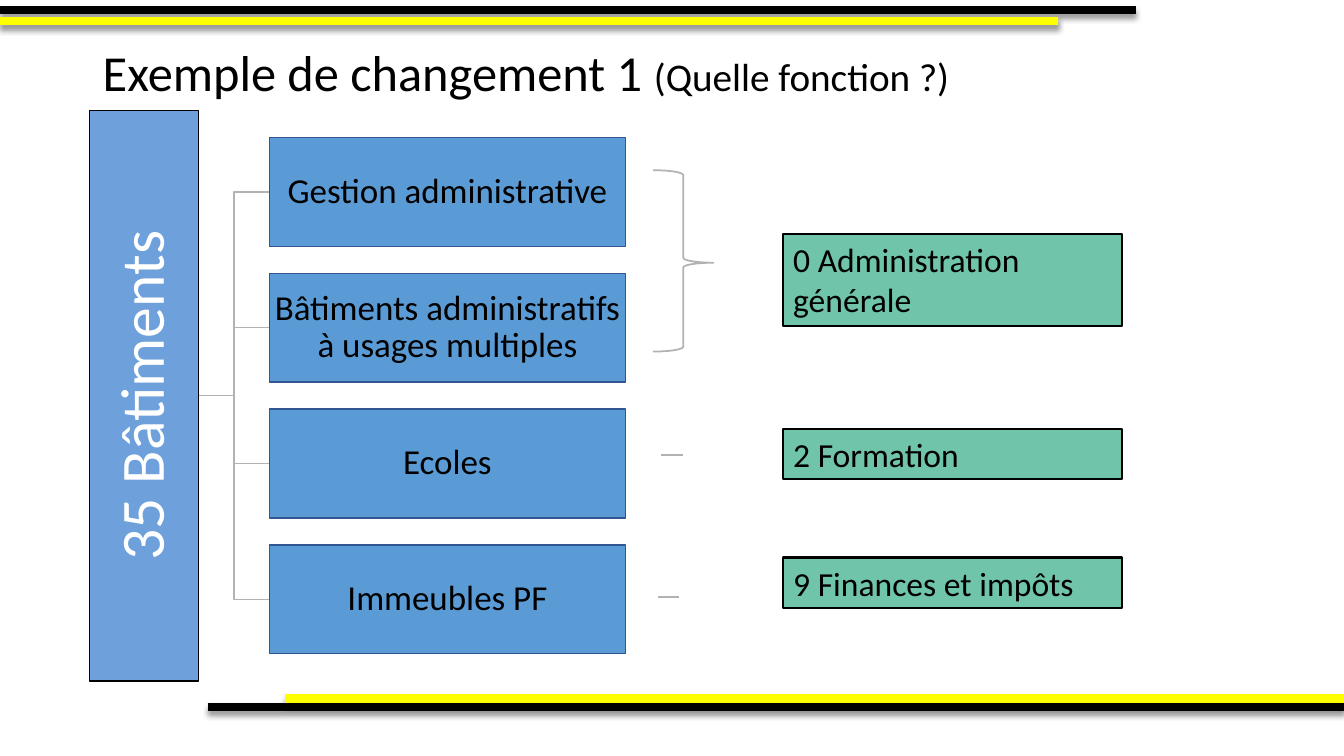
from lxml import etree
from pptx import Presentation
from pptx.dml.color import RGBColor
from pptx.enum import shapes, text
from pptx.oxml import parse_xml
from pptx.oxml.ns import nsdecls, qn
from pptx.util import Cm, Pt

BLACK = RGBColor(0x00, 0x00, 0x00)
WHITE = RGBColor(0xFF, 0xFF, 0xFF)
YELLOW = RGBColor(0xFF, 0xFF, 0x00)
GREY = RGBColor(0xB2, 0xB2, 0xB2)
BLUE = RGBColor(0x5B, 0x9B, 0xD5)
BLUE_EDGE = RGBColor(0x32, 0x54, 0x91)
BAR_BLUE = RGBColor(0x6E, 0xA0, 0xDC)
GREEN = RGBColor(0x70, 0xC4, 0xA9)
SHADOW = (
    f'<a:effectLst {nsdecls("a")}><a:outerShdw blurRad="50800" dist="38100" dir="5400000" '
    'rotWithShape="0"><a:srgbClr val="000000"><a:alpha val="40000"/></a:srgbClr>'
    '</a:outerShdw></a:effectLst>'
)

prs = Presentation()
prs.slide_width, prs.slide_height = Cm(33.87), Cm(19.05)
s = prs.slides.add_slide(prs.slide_layouts[6])


def add_rule(x1, x2, y, color, width, shadow=False):
    """Draw a horizontal line; positions in centimetres, width in points."""
    ln = s.shapes.add_connector(shapes.MSO_CONNECTOR.STRAIGHT, Cm(x1), Cm(y), Cm(x2), Cm(y))
    ln.line.color.rgb = color
    ln.line.width = Pt(width)
    sp_pr = ln._element.spPr
    if shadow:
        sp_pr.append(parse_xml(SHADOW))
    else:
        etree.SubElement(sp_pr, qn("a:effectLst"))


def add_box(label, x, y, w, h, fill, edge, edge_width, size, color):
    """Draw a labelled rectangle; positions in centimetres."""
    sp = s.shapes.add_shape(shapes.MSO_SHAPE.RECTANGLE, Cm(x), Cm(y), Cm(w), Cm(h))
    sp.shadow.inherit = False
    sp.fill.solid()
    sp.fill.fore_color.rgb = fill
    sp.line.color.rgb = edge
    sp.line.width = Pt(edge_width)
    tf = sp.text_frame
    tf.word_wrap = True
    tf.text = label
    font = tf.paragraphs[0].runs[0].font
    font.name, font.size, font.color.rgb = "Calibri", Pt(size), color
    return sp


# Decorative bands
for x1, x2, y, color in [
    (5.23, 33.87, 17.81, BLACK),
    (7.19, 33.87, 17.6, YELLOW),
    (0, 28.63, 0.25, BLACK),
    (0, 26.67, 0.53, YELLOW),
]:
    add_rule(x1, x2, y, color, 6, shadow=True)

# Title
title = s.shapes.add_textbox(Cm(2.34), Cm(1.02), Cm(29.21), Cm(1.75))
tf = title.text_frame
tf.word_wrap = True
tf.vertical_anchor = text.MSO_ANCHOR.MIDDLE
p = tf.paragraphs[0]
p.line_spacing = 0.9
for part, size in [("Exemple de changement 1 ", 36), ("(Quelle fonction ?)", 28)]:
    r = p.add_run()
    r.text = part
    r.font.name, r.font.size, r.font.color.rgb = "Calibri", Pt(size), BLACK

# Hierarchy: root bar, branches and leaves
ROOT_X, ROOT_Y, BEND_X = 5.0, 9.97, 5.9
LEAF_X, LEAF_Y, LEAF_W, LEAF_H, LEAF_STEP = 6.79, 3.47, 8.97, 2.74, 3.42
leaves = ["Gestion administrative", "Bâtiments administratifs à usages multiples",
          "Ecoles", "Immeubles PF"]
tops = [LEAF_Y + i * LEAF_STEP for i in range(len(leaves))]

for top in tops:
    mid = top + LEAF_H / 2
    fb = s.shapes.build_freeform(Cm(ROOT_X), Cm(ROOT_Y))
    fb.add_line_segments(
        [(Cm(BEND_X), Cm(ROOT_Y)), (Cm(BEND_X), Cm(mid)), (Cm(LEAF_X), Cm(mid))], close=False)
    branch = fb.convert_to_shape()
    branch.shadow.inherit = False
    branch.fill.background()
    branch.line.color.rgb = GREY
    branch.line.width = Pt(1)

root = add_box("35 Bâtiments", -3.56, 8.6, 14.38, LEAF_H, BAR_BLUE, BLACK, 1, 44, WHITE)
root.rotation = 270
nodes = [root] + [
    add_box(label, LEAF_X, top, LEAF_W, LEAF_H, BLUE, BLUE_EDGE, 1, 25, BLACK)
    for label, top in zip(leaves, tops)
]
for sp in nodes:
    tf = sp.text_frame
    tf.margin_left = tf.margin_right = tf.margin_top = tf.margin_bottom = Cm(0.05)
    tf.vertical_anchor = text.MSO_ANCHOR.MIDDLE
    tf.paragraphs[0].alignment = text.PP_ALIGN.CENTER
    tf.paragraphs[0].line_spacing = 0.9

# Links to the functions
brace = s.shapes.add_shape(
    shapes.MSO_SHAPE.RIGHT_BRACE, Cm(16.46), Cm(4.29), Cm(1.52), Cm(4.57))
brace.adjustments[0], brace.adjustments[1] = 0.08, 0.51
brace.shadow.inherit = False
brace.fill.background()
brace.line.color.rgb = GREY
brace.line.width = Pt(1.25)
add_rule(16.66, 17.2, 11.46, GREY, 1.25)
add_rule(16.59, 17.12, 15.04, GREY, 1.25)

# Functions
for label, top, height in [
    ("0 Administration générale", 5.9, 2.31),
    ("2 Formation", 10.8, 1.28),
    ("9 Finances et impôts", 14.05, 1.28),
]:
    sp = add_box(label, 19.74, top, 8.53, height, GREEN, BLACK, 1.5, 24, BLACK)
    sp.text_frame.vertical_anchor = text.MSO_ANCHOR.TOP
    sp.text_frame.paragraphs[0].alignment = text.PP_ALIGN.LEFT

prs.save("out.pptx")
